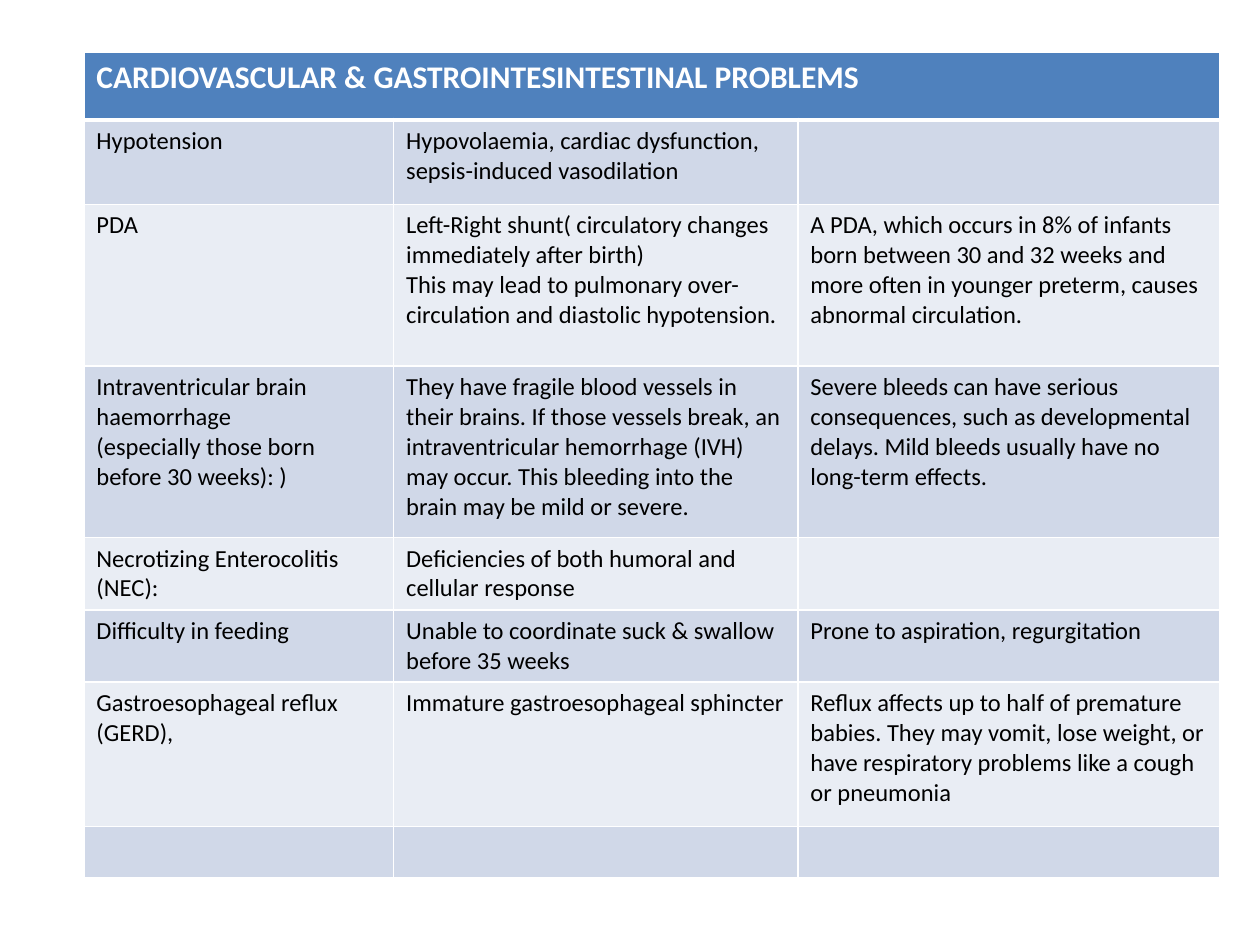
from typing import NamedTuple

from lxml.etree import SubElement
from pptx import Presentation
from pptx.dml.color import RGBColor
from pptx.oxml.ns import qn
from pptx.util import Pt

WHITE = RGBColor(0xFF, 0xFF, 0xFF)
BLACK = RGBColor(0x00, 0x00, 0x00)
HEADER_BLUE = RGBColor(0x4F, 0x81, 0xBD)
BAND_COLORS = (RGBColor(0xD0, 0xD8, 0xE8), RGBColor(0xE9, 0xED, 0xF4))

FONT = "Calibri"
TABLE_LEFT, TABLE_TOP = 47.9, 29.7
COLUMN_WIDTHS = (177, 231, 241.3)
HEADER_HEIGHT = 38.9
TITLE = "CARDIOVASCULAR & GASTROINTESINTESTINAL PROBLEMS"


class Problem(NamedTuple):
    height: float
    name: str = ""
    cause: str = ""
    effect: str = ""


PROBLEMS = (
    Problem(48.2, "Hypotension",
            "Hypovolaemia, cardiac dysfunction, sepsis-induced vasodilation"),
    Problem(92.5, "PDA",
            "Left-Right shunt( circulatory changes immediately after birth)\n"
            "This may lead to pulmonary over-circulation and diastolic hypotension.",
            "A PDA, which occurs in 8% of infants born between 30 and 32 weeks "
            "and more often in younger preterm, causes abnormal circulation."),
    Problem(97.9,
            "Intraventricular brain haemorrhage\n"
            "(especially those born before 30 weeks): )",
            "They have fragile blood vessels in their brains. If those vessels "
            "break, an intraventricular hemorrhage (IVH) may occur. This bleeding "
            "into the brain may be mild or severe.",
            "Severe bleeds can have serious consequences, such as developmental "
            "delays. Mild bleeds usually have no long-term effects."),
    Problem(41.2, "Necrotizing Enterocolitis (NEC):",
            "Deficiencies of both humoral and cellular response"),
    Problem(41.4, "Difficulty in feeding",
            "Unable to coordinate suck & swallow before 35 weeks",
            "Prone to aspiration, regurgitation"),
    Problem(82.4, "Gastroesophageal reflux (GERD),",
            "Immature gastroesophageal sphincter",
            "Reflux affects up to half of premature babies. They may vomit, lose "
            "weight, or have respiratory problems like a cough or pneumonia"),
    Problem(28.8),
)


def write_text(frame, text: str, *, size: float = 14,
               color: RGBColor = BLACK, bold: bool = False) -> None:
    """Write one paragraph for each line of text."""
    if not text:
        return
    for index, line in enumerate(text.split("\n")):
        paragraph = frame.paragraphs[0] if index == 0 else frame.add_paragraph()
        run = paragraph.add_run()
        run.text = line
        run.font.name = FONT
        run.font.size = Pt(size)
        run.font.bold = bold
        run.font.color.rgb = color


def style_cell(cell, fill: RGBColor, top: float = 1, bottom: float = 1) -> None:
    """Give a cell its white borders, with widths in points, and its fill."""
    properties = cell._tc.get_or_add_tcPr()
    for side, width in (("L", 1), ("R", 1), ("T", top), ("B", bottom)):
        line = SubElement(properties, qn(f"a:ln{side}"), w=str(Pt(width)))
        solid = SubElement(line, qn("a:solidFill"))
        SubElement(solid, qn("a:srgbClr"), val=str(WHITE))
    cell.fill.solid()
    cell.fill.fore_color.rgb = fill


def add_problem_table(slide) -> None:
    heights = (HEADER_HEIGHT, *(problem.height for problem in PROBLEMS))
    table = slide.shapes.add_table(
        len(heights), len(COLUMN_WIDTHS), Pt(TABLE_LEFT), Pt(TABLE_TOP),
        Pt(sum(COLUMN_WIDTHS)), Pt(sum(heights))).table
    for column, width in zip(table.columns, COLUMN_WIDTHS):
        column.width = Pt(width)
    for row, height in zip(table.rows, heights):
        row.height = Pt(height)

    header = table.rows[0].cells
    for cell in header:
        style_cell(cell, HEADER_BLUE, bottom=3)
    table.cell(0, 0).merge(table.cell(0, len(COLUMN_WIDTHS) - 1))
    write_text(table.cell(0, 0).text_frame, TITLE, size=18, color=WHITE, bold=True)

    for index, problem in enumerate(PROBLEMS):
        texts = (problem.name, problem.cause, problem.effect)
        for column, text in enumerate(texts):
            cell = table.cell(index + 1, column)
            style_cell(cell, BAND_COLORS[index % 2], top=3 if index == 0 else 1)
            write_text(cell.text_frame, text)


def main() -> None:
    presentation = Presentation()
    presentation.slide_width, presentation.slide_height = Pt(720), Pt(540)
    slide = presentation.slides.add_slide(presentation.slide_layouts[6])
    add_problem_table(slide)
    presentation.save("out.pptx")


if __name__ == "__main__":
    main()
